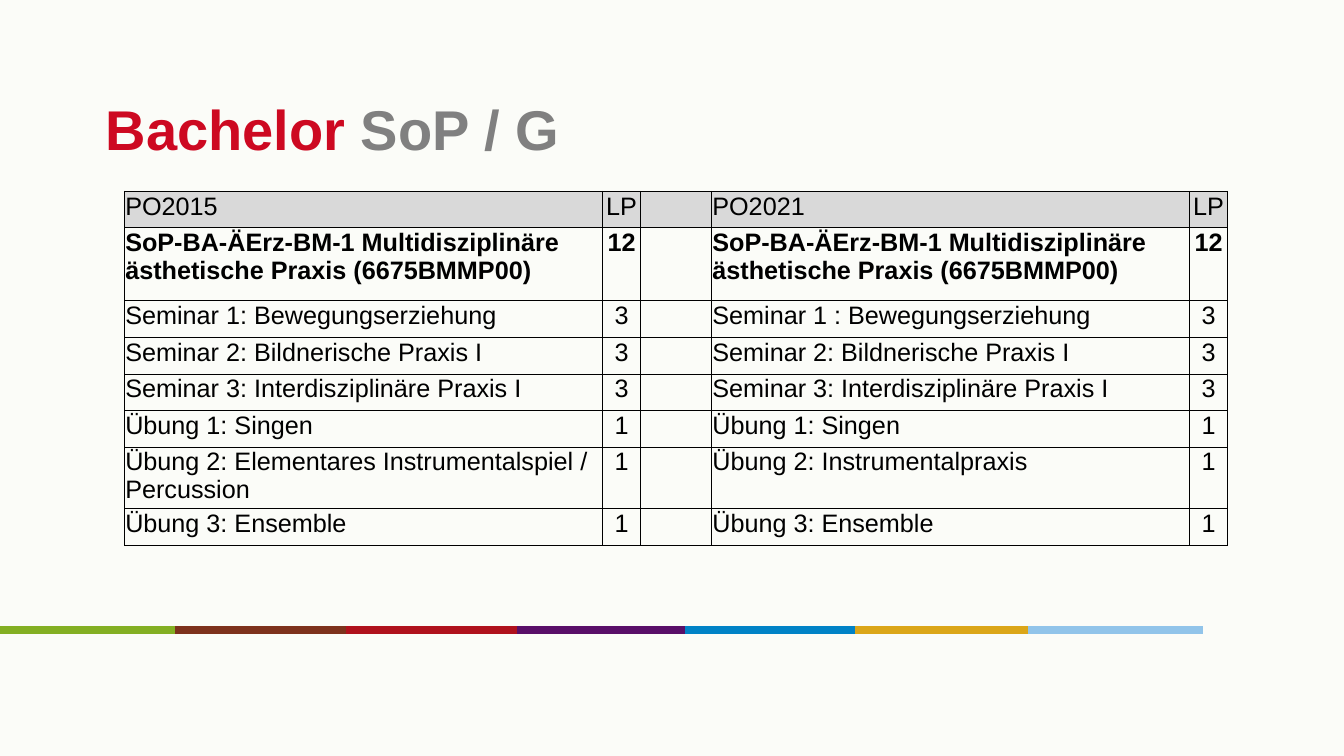
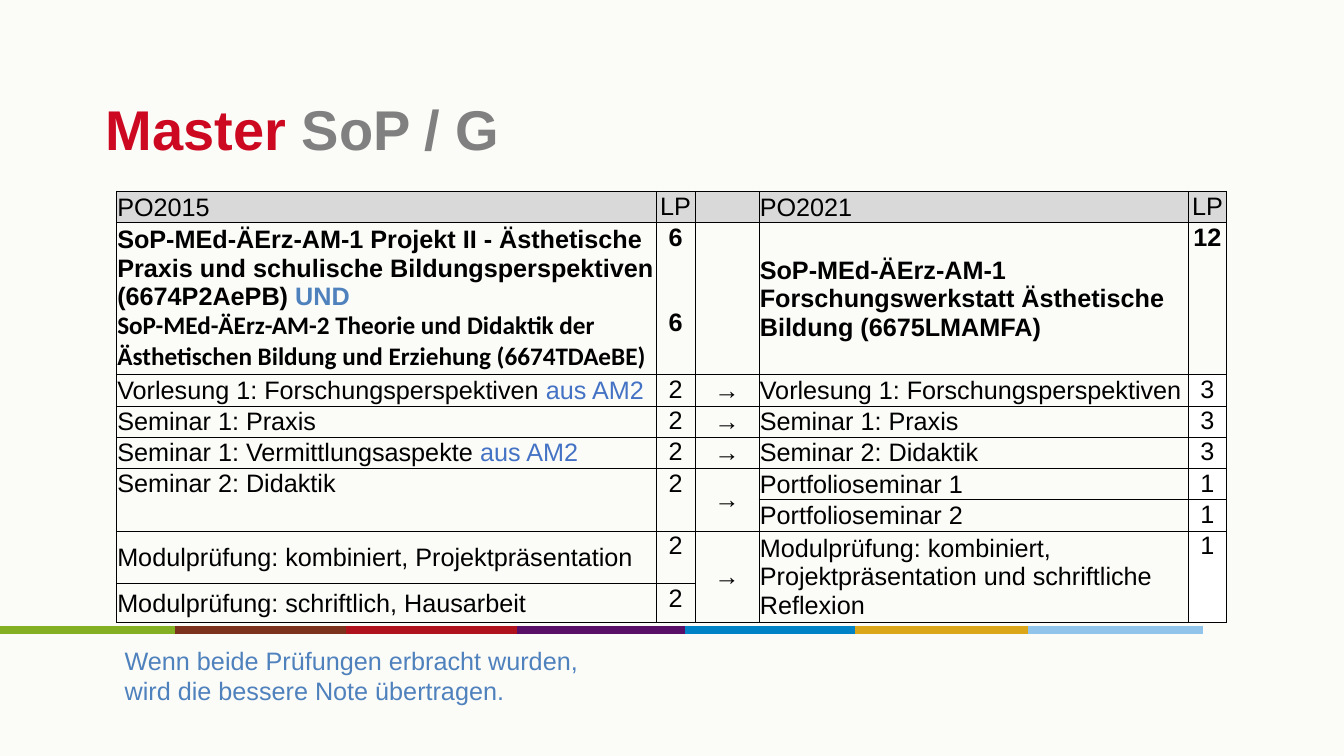
from lxml import etree
from pptx import Presentation
from pptx.dml.color import RGBColor
from pptx.enum.shapes import MSO_CONNECTOR
from pptx.enum.text import MSO_ANCHOR, PP_ALIGN
from pptx.oxml.ns import qn
from pptx.util import Pt

LINE = MSO_CONNECTOR.STRAIGHT
TOP, MID = MSO_ANCHOR.TOP, MSO_ANCHOR.MIDDLE
LEFT, MIDDLE = PP_ALIGN.LEFT, PP_ALIGN.CENTER

PAPER = RGBColor(0xFB, 0xFC, 0xF8)
RED = RGBColor(0xCD, 0x09, 0x21)
GREY = RGBColor(0x80, 0x80, 0x80)
HEAD = RGBColor(0xD9, 0xD9, 0xD9)
BLACK = RGBColor(0, 0, 0)
WHITE = RGBColor(0xFF, 0xFF, 0xFF)
BLUE = RGBColor(0x4F, 0x81, 0xBD)
AZURE = RGBColor(0x44, 0x72, 0xC4)

BARS = [
    (0, RGBColor(0x83, 0xAF, 0x23)),
    (125.3, RGBColor(0x7D, 0x32, 0x1D)),
    (247, RGBColor(0xAF, 0x11, 0x1D)),
    (369.4, RGBColor(0x59, 0x0F, 0x68)),
    (489.6, RGBColor(0x00, 0x82, 0xC6)),
    (610.6, RGBColor(0xDB, 0xA6, 0x19)),
    (734.4, RGBColor(0x91, 0xC4, 0xEA)),
]
BAND = (0, 450, 124.8)
TITLE = (72, 46.8, 816, 90)
NOTE = (82, 457.2, 345.6, 51)

BA_HEAD = "SoP-BA-ÄErz-BM-1 Multidisziplinäre ästhetische Praxis (6675BMMP00)"
BA_ROWS = [
    ("PO2015", "LP", "", "PO2021", "LP"),
    (BA_HEAD, "12", "", BA_HEAD, "12"),
    ("Seminar 1: Bewegungserziehung", "3", "",
     "Seminar 1 : Bewegungserziehung", "3"),
    ("Seminar 2: Bildnerische Praxis I", "3", "",
     "Seminar 2: Bildnerische Praxis I", "3"),
    ("Seminar 3: Interdisziplinäre Praxis I", "3", "",
     "Seminar 3: Interdisziplinäre Praxis I", "3"),
    ("Übung 1: Singen", "1", "", "Übung 1: Singen", "1"),
    ("Übung 2: Elementares Instrumentalspiel / Percussion", "1", "",
     "Übung 2: Instrumentalpraxis", "1"),
    ("Übung 3: Ensemble", "1", "", "Übung 3: Ensemble", "1"),
]

FROM_AM2 = ("aus AM2", {"color": AZURE})
MA_HEAD = [
    [("SoP-MEd-ÄErz-AM-1 Projekt II - Ästhetische Praxis und schulische "
      "Bildungsperspektiven (6674P2AePB) ", {}), ("UND", {"color": BLUE})],
    [("SoP-MEd-ÄErz-AM-2 Theorie und Didaktik der Ästhetischen Bildung "
      "und Erziehung (6674TDAeBE)", {"face": "Calibri"})],
]
MA_ROWS = [
    ("PO2015", "LP", "", "PO2021", "LP"),
    (MA_HEAD, [[("6", {})], [("6", {})]], "",
     "SoP-MEd-ÄErz-AM-1 Forschungswerkstatt Ästhetische Bildung (6675LMAMFA)",
     "12"),
    ([[("Vorlesung 1: Forschungsperspektiven ", {}), FROM_AM2]], "2", "→",
     "Vorlesung 1: Forschungsperspektiven", "3"),
    ("Seminar 1: Praxis", "2", "→", "Seminar 1: Praxis", "3"),
    ([[("Seminar 1: Vermittlungsaspekte ", {}), FROM_AM2]], "2", "→",
     "Seminar 2: Didaktik", "3"),
    ("Seminar 2: Didaktik", "2", "→", "Portfolioseminar 1", "1"),
    ("", "", "", "Portfolioseminar 2", "1"),
    ("Modulprüfung: kombiniert, Projektpräsentation", "2", "→",
     "Modulprüfung: kombiniert, Projektpräsentation und schriftliche Reflexion",
     "1"),
    ("Modulprüfung: schriftlich, Hausarbeit", "2", "", "", ""),
]
MA_SPANS = [(5, 0), (5, 1), (5, 2), (7, 2), (7, 3), (7, 4)]
MA_MIDS = {(r, c) for r in range(9) for c in (0, 2, 3)} - {(5, 0)}
MA_WHITE = {(r, 4) for r in range(2, 9)}


def add_run(para, text, size=18, color=BLACK, face="Arial", bold=False):
    """Append one styled run."""
    run = para.add_run()
    run.text = text
    font = run.font
    font.size, font.name, font.bold = Pt(size), face, bold
    font.color.rgb = color


def add_text(slide, box, runs, inset, anchor):
    """Place a wrapped text box holding one paragraph."""
    frame = slide.shapes.add_textbox(*map(Pt, box)).text_frame
    frame.word_wrap = True
    frame.vertical_anchor = anchor
    frame.margin_left = frame.margin_right = Pt(inset)
    frame.margin_top = frame.margin_bottom = Pt(3.6)
    for text, style in runs:
        add_run(frame.paragraphs[0], text, **style)


def add_band(slide, left, top, width):
    """Draw the strip of coloured bars."""
    for start, color in BARS:
        x = left + start
        bar = slide.shapes.add_connector(
            LINE, Pt(x), Pt(top), Pt(x + width), Pt(top))
        bar.line.color.rgb = color
        bar.line.width = Pt(5.5)
        etree.SubElement(bar.element.spPr, qn("a:effectLst"))


def add_edges(cell):
    """Give a cell thin black borders on all sides."""
    props = cell._tc.get_or_add_tcPr()
    for spot, side in enumerate("LRTB"):
        edge = etree.Element(qn("a:ln" + side), w=str(Pt(0.5)))
        fill = etree.SubElement(edge, qn("a:solidFill"))
        etree.SubElement(fill, qn("a:srgbClr"), val=str(BLACK))
        props.insert(spot, edge)


def fill_cell(cell, data, align, anchor, bold, gap):
    """Write the paragraphs of one cell."""
    cell.margin_left = cell.margin_right = cell.margin_top = Pt(0.7)
    cell.margin_bottom = 0
    cell.vertical_anchor = anchor
    frame = cell.text_frame
    if not data:
        end = frame.paragraphs[0]._p.get_or_add_endParaRPr()
        end.set("sz", "1200")
        return
    paras = [[(data, {})]] if isinstance(data, str) else data
    for i, runs in enumerate(paras):
        para = frame.add_paragraph() if i else frame.paragraphs[0]
        para.alignment = align
        if i and gap:
            para.space_before = Pt(gap)
        for text, style in runs:
            add_run(para, text, bold=bold, **style)


def add_grid(slide, left, top, cols, highs, rows,
             spans=(), mids=(), white=()):
    """Place a bordered table that compares both rule sets."""
    grid = slide.shapes.add_table(
        len(rows), len(cols), Pt(left), Pt(top),
        Pt(sum(cols)), Pt(sum(highs))).table
    grid.first_row = grid.horz_banding = False
    for col, width in zip(grid.columns, cols):
        col.width = Pt(width)
    for row, high in zip(grid.rows, highs):
        row.height = Pt(high)
    for r, row in enumerate(rows):
        for c, data in enumerate(row):
            cell = grid.cell(r, c)
            narrow = c in (1, 2, 4)
            fill_cell(cell, data, MIDDLE if narrow else LEFT,
                      MID if (r, c) in mids else TOP,
                      r == 1, 40.4 if narrow else 0)
            if r == 0 or (r, c) in white:
                cell.fill.solid()
                cell.fill.fore_color.rgb = WHITE if r else HEAD
            else:
                cell.fill.background()
            add_edges(cell)
    for r, c in spans:
        grid.cell(r, c).merge(grid.cell(r + 1, c))


def add_page(deck, level):
    """Start a slide with its ground, band and title."""
    slide = deck.slides.add_slide(deck.slide_layouts[6])
    slide.background.fill.solid()
    slide.background.fill.fore_color.rgb = PAPER
    add_band(slide, *BAND)
    look = {"size": 40, "bold": True}
    add_text(slide, TITLE, [(level + " ", {"color": RED, **look}),
                            ("SoP / G", {"color": GREY, **look})], 3.6, MID)
    return slide


def main():
    """Build and save the deck."""
    deck = Presentation()
    deck.slide_width, deck.slide_height = Pt(960), Pt(540)
    page = add_page(deck, "Bachelor")
    add_grid(page, 88.8, 136.6, [341.6, 27.2, 50.6, 341.6, 27.2],
             [26.1, 52.2] + [26.1] * 4 + [40.7, 26.1], BA_ROWS)
    page = add_page(deck, "Master")
    add_grid(page, 83.1, 136.6, [385.5, 28, 45.5, 306.7, 27.4],
             [20.9, 105.5] + [20.9] * 5 + [37.8, 23.6], MA_ROWS,
             MA_SPANS, MA_MIDS, MA_WHITE)
    add_text(page, NOTE, [("Wenn beide Prüfungen erbracht wurden, wird die "
                           "bessere Note übertragen.", {"color": BLUE})],
             7.2, TOP)
    deck.save("out.pptx")


if __name__ == "__main__":
    main()
